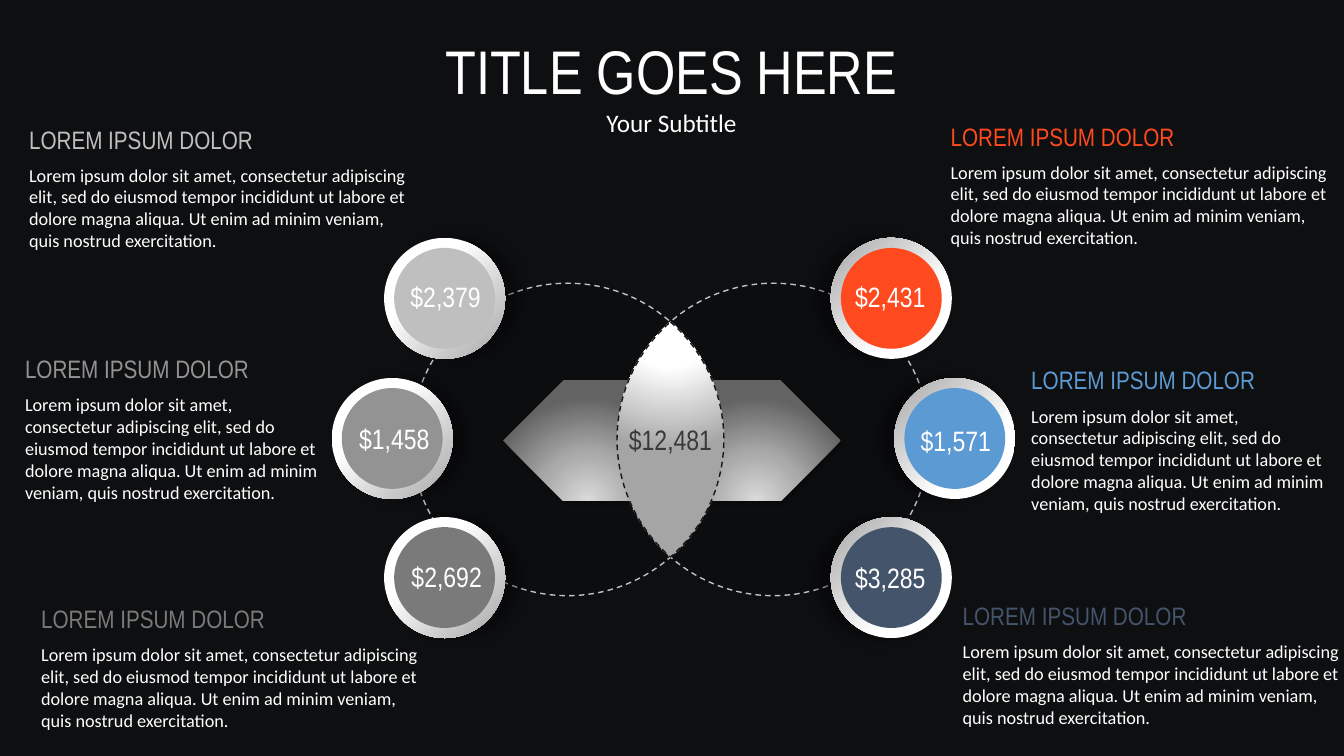
"""Build a dark slide of two overlapping circles with six priced callouts."""
from math import acos, cos, sin
from lxml.etree import SubElement
from pptx import Presentation
from pptx.dml.color import RGBColor
from pptx.enum.dml import MSO_LINE
from pptx.enum.shapes import MSO_SHAPE
from pptx.enum.text import MSO_ANCHOR, MSO_AUTO_SIZE, PP_ALIGN
from pptx.oxml import parse_xml
from pptx.oxml.ns import nsdecls, qn
from pptx.util import Inches, Pt

THEME = {
    "back": "0E0F11", "white": "FFFFFF", "black": "000000", "edge": "181717", "total": "3B3838",
    "silver": [(0, "FFFFFF"), (35, "FFFFFF"), (100, "A5A5A5")],
    "steel": [(0, "DBDBDB"), (46, "AAAAAA"), (100, "636363")],
    "title": {"name": "Arial Narrow", "size": Pt(44)},
    "subtitle": {"name": "Calibri", "size": Pt(18)},
    "heading": {"name": "Arial Narrow", "size": Pt(18)},
    "body": {"name": "Calibri", "size": Pt(13)},
    "value": {"name": "Arial Narrow", "size": Pt(20)},
}
FRAME = {"word_wrap": True, "vertical_anchor": MSO_ANCHOR.TOP,
         "auto_size": MSO_AUTO_SIZE.SHAPE_TO_FIT_TEXT}
HEADING = "LOREM IPSUM DOLOR"
BODY = ("Lorem ipsum dolor sit amet, consectetur adipiscing elit, sed do eiusmod tempor "
        "incididunt ut labore et dolore magna aliqua. Ut enim ad minim veniam, quis nostrud "
        "exercitation.")
LEFT, CENTER = PP_ALIGN.LEFT, PP_ALIGN.CENTER

CALLOUTS = [
    ("BFBFBF", "$2,379", (3.81, 2.36), 0, (3.88, 2.72), (0.19, 1.18, 4, 1.47)),
    ("939393", "$1,458", (3.29, 3.75), 0, (3.37, 4.13), (0.15, 3.46, 3.1, 1.91)),
    ("7A7A7A", "$2,692", (3.81, 5.13), 0, (3.89, 5.5), (0.31, 5.94, 4, 1.47)),
    ("44546B", "$3,285", (8.24, 5.13), 180, (8.29, 5.51), (9.45, 5.91, 4, 1.43)),
    ("5C9AD3", "$1,571", (8.87, 3.75), 180, (8.94, 4.15), (10.13, 3.57, 3.1, 1.86)),
    ("FE4A1E", "$2,431", (8.24, 2.36), 180, (8.29, 2.72), (9.33, 1.15, 4, 1.47)),
]


def paint(sp, stops, direction, shadow=None):
    """Give a shape a gradient and, if wanted, a soft shadow."""
    sp.shadow.inherit = False
    sp.fill.solid()
    marks = "".join(f'<a:gs pos="{pos * 1000}"><a:srgbClr val="{color}"/></a:gs>'
                    for pos, color in stops)
    spPr = sp._element.spPr
    spPr.replace(spPr.find(qn("a:solidFill")), parse_xml(
        f'<a:gradFill {nsdecls("a")} rotWithShape="1"><a:gsLst>{marks}</a:gsLst>'
        f'{direction}</a:gradFill>'))
    if shadow:
        alpha, blur, dist, angle = shadow
        spPr.find(qn("a:effectLst")).append(parse_xml(
            f'<a:outerShdw {nsdecls("a")} blurRad="{Pt(blur)}" dist="{Pt(dist)}" '
            f'dir="{angle * 60000}" algn="ctr" rotWithShape="0">'
            f'<a:srgbClr val="{THEME["black"]}"><a:alpha val="{alpha * 1000}"/></a:srgbClr>'
            f'</a:outerShdw>'))


def write(box, lines, align):
    """Add a text box holding (text, style, color, space before) lines."""
    tf = s.shapes.add_textbox(*map(Inches, box)).text_frame
    for key, value in FRAME.items():
        setattr(tf, key, value)
    for i, (text, style, color, before) in enumerate(lines):
        p = tf.add_paragraph() if i else tf.paragraphs[0]
        p.alignment, p.space_before = align, Pt(before)
        r = p.add_run()
        r.text = text
        for key, value in THEME[style].items():
            setattr(r.font, key, value)
        r.font.color.rgb = RGBColor.from_string(color)


prs = Presentation()
prs.slide_width, prs.slide_height = Inches(13.33), Inches(7.5)
s = prs.slides.add_slide(prs.slide_layouts[6])
s.background.fill.solid()
s.background.fill.fore_color.rgb = RGBColor.from_string(THEME["back"])

mid_x, mid_y, radius, offset = 6.65, 4.36, 1.55, 1.02
for side in (-1, 1):
    sp = s.shapes.add_shape(MSO_SHAPE.OVAL, Inches(mid_x + side * offset - radius),
                            Inches(mid_y - radius), Inches(2 * radius), Inches(2 * radius))
    sp.shadow.inherit = False
    sp.fill.solid()
    sp.line.width, sp.line.dash_style = Pt(1), MSO_LINE.DASH
    for part, color, alpha in ((sp.fill.fore_color, "black", 10), (sp.line.color, "white", 75)):
        part.rgb = RGBColor.from_string(THEME[color])
    for clr, alpha in zip(sp._element.spPr.iter(qn("a:srgbClr")), (10, 75)):
        SubElement(clr, qn("a:alpha")).set("val", str(alpha * 1000))

write((3.65, 0.28, 6.02, 1.14), [("TITLE GOES HERE", "title", THEME["white"], 0),
                                 ("Your Subtitle", "subtitle", THEME["white"], 0)], CENTER)

glow = '<a:path path="circle"><a:fillToRect l="50000" t="{}" r="50000" b="{}"/></a:path>'
for x, turn in ((6.66, 0), (4.99, 180)):
    sp = s.shapes.add_shape(MSO_SHAPE.PENTAGON, *map(Inches, (x, 3.77, 1.68, 1.2)))
    sp.rotation = turn
    sp.line.fill.background()
    paint(sp, THEME["steel"], glow.format(130000, -30000), (30, 4.5, 2.6, 53))

half, steps = acos(offset / radius), 40
angles = [half * (2 * i / steps - 1) for i in range(steps + 1)]
lens = [(Inches(mid_x + side * (radius * cos(a) - offset)), Inches(mid_y + side * radius * sin(a)))
        for side in (1, -1) for a in angles]
fb = s.shapes.build_freeform(*lens[0])
fb.add_line_segments(lens[1:], close=True)
sp = fb.convert_to_shape()
paint(sp, THEME["silver"], glow.format(-80000, 180000))
sp.line.color.rgb = RGBColor.from_string(THEME["edge"])
sp.line.width, sp.line.dash_style = Pt(1), MSO_LINE.DASH

for color, value, (x, y), turn, label, note in CALLOUTS:
    ring, disc = [s.shapes.add_shape(MSO_SHAPE.OVAL, *map(Inches, (x + gap, y + gap, size, size)))
                  for gap, size in ((0, 1.2), (0.1, 1))]
    for sp in (ring, disc):
        sp.rotation = turn
        sp.line.fill.background()
    paint(ring, THEME["silver"], '<a:lin ang="2700000" scaled="0"/>', (40, 10, 10, turn))
    disc.shadow.inherit = False
    disc.fill.solid()
    disc.fill.fore_color.rgb = RGBColor.from_string(color)
    write(note, [(HEADING, "heading", color, 0), (BODY, "body", THEME["white"], 7)], LEFT)
    write((*label, 1.08, 0.44), [(value, "value", THEME["white"], 0)], CENTER)

write((6.11, 4.14, 1.08, 0.44), [("$12,481", "value", THEME["total"], 0)], CENTER)

prs.save("out.pptx")
